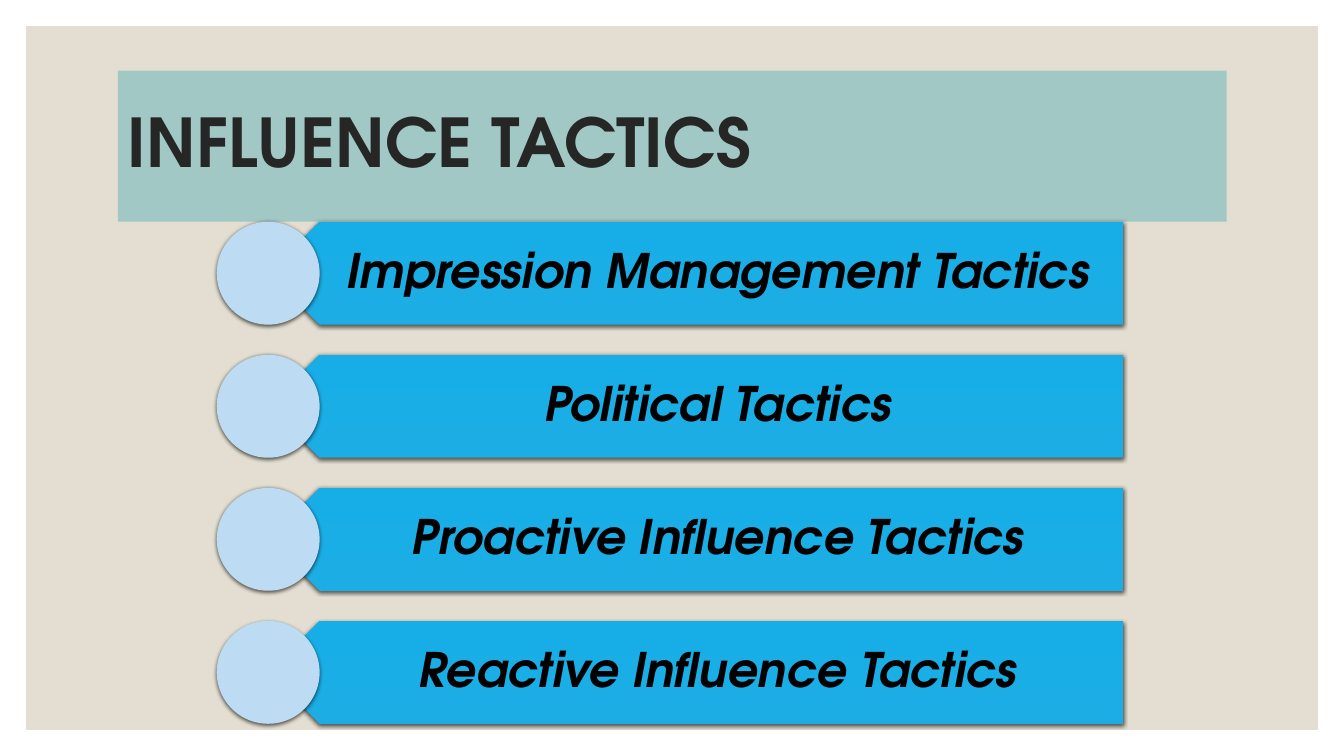
from dataclasses import dataclass

from lxml.etree import SubElement
from pptx import Presentation
from pptx.dml.color import RGBColor
from pptx.enum.shapes import MSO_SHAPE
from pptx.enum.text import MSO_ANCHOR, MSO_AUTO_SIZE, PP_ALIGN
from pptx.oxml.ns import qn
from pptx.util import Pt


@dataclass(frozen=True)
class Theme:
    font: str = "TeX Gyre Adventor"
    panel: str = "E3DED1"
    title_band: str = "A1C8C5"
    title_text: str = "262626"
    arrow_top: str = "1CADE4"
    arrow_bottom: str = "17AEE7"
    circle: str = "BDDBF2"
    tactic_text: str = "000000"
    shadow: str = "000000"
    title_size: float = 48
    tactic_size: float = 34


@dataclass(frozen=True)
class Box:
    left: float
    top: float
    width: float
    height: float

    def lengths(self):
        return Pt(self.left), Pt(self.top), Pt(self.width), Pt(self.height)


THEME = Theme()
SLIDE_WIDTH, SLIDE_HEIGHT = 960, 540
PANEL_MARGIN = 18.7
TITLE_BOX = Box(84.2, 50.4, 792, 108)
LIST_BOX = Box(154.8, 158.4, 647.4, 358.6)
ROW_HEIGHT = 73.5
TACTICS = (
    "Impression Management Tactics",
    "Political Tactics",
    "Proactive Influence Tactics",
    "Reactive Influence Tactics",
)


def color(value):
    return RGBColor.from_string(value)


def write_text(shape, text, size, text_color, align=PP_ALIGN.LEFT, italic=False,
               insets=(7.2, 3.6, 7.2, 3.6)):
    frame = shape.text_frame
    frame.word_wrap = True
    frame.auto_size = MSO_AUTO_SIZE.NONE
    frame.vertical_anchor = MSO_ANCHOR.MIDDLE
    frame.margin_left, frame.margin_top, frame.margin_right, frame.margin_bottom = map(Pt, insets)
    paragraph = frame.paragraphs[0]
    paragraph.alignment = align
    paragraph.line_spacing = 0.9
    run = paragraph.add_run()
    run.text = text
    run.font.name = THEME.font
    run.font.size = Pt(size)
    run.font.bold = True
    run.font.italic = italic
    run.font.color.rgb = color(text_color)


def add_plain_shape(shapes, preset, box):
    shape = shapes.add_shape(preset, *box.lengths())
    shape.shadow.inherit = False
    shape.line.fill.background()
    return shape


def fill_solid(shape, fill_color):
    shape.fill.solid()
    shape.fill.fore_color.rgb = color(fill_color)


def fill_gradient(shape, top_color, bottom_color):
    shape.fill.gradient()
    shape.fill.gradient_angle = 270
    for stop, stop_color in zip(shape.fill.gradient_stops, (top_color, bottom_color)):
        stop.color.rgb = color(stop_color)


def add_drop_shadow(shape):
    effects = shape._element.spPr.find(qn("a:effectLst"))
    shadow = SubElement(effects, qn("a:outerShdw"), blurRad=str(Pt(3)), dist=str(Pt(1)),
                        dir="5400000", rotWithShape="0")
    shade = SubElement(shadow, qn("a:srgbClr"), val=THEME.shadow)
    SubElement(shade, qn("a:alpha"), val="63000")


def place_title(slide, box, text):
    title = slide.shapes.title
    title.left, title.top, title.width, title.height = box.lengths()
    fill_solid(title, THEME.title_band)
    write_text(title, text, THEME.title_size, THEME.title_text)


def add_panel(slide, box):
    panel = add_plain_shape(slide.shapes, MSO_SHAPE.RECTANGLE, box)
    fill_solid(panel, THEME.panel)
    slide.shapes.title._element.addprevious(panel._element)


def add_tactic(shapes, box, text):
    radius = box.height / 2
    arrow_box = Box(box.left + radius, box.top, box.width - radius, box.height)
    arrow = add_plain_shape(shapes, MSO_SHAPE.PENTAGON, arrow_box)
    arrow.rotation = 180
    fill_gradient(arrow, THEME.arrow_top, THEME.arrow_bottom)
    add_drop_shadow(arrow)

    text_left = box.left + radius * 1.5
    text_box = Box(text_left, box.top, box.left + box.width - text_left, box.height)
    label = shapes.add_textbox(*text_box.lengths())
    write_text(label, text, THEME.tactic_size, THEME.tactic_text, align=PP_ALIGN.CENTER,
               italic=True, insets=(32.4, 10.1, 18.7, 10.1))

    circle = add_plain_shape(shapes, MSO_SHAPE.OVAL,
                             Box(box.left, box.top, box.height, box.height))
    fill_solid(circle, THEME.circle)
    add_drop_shadow(circle)


def add_tactic_list(slide, box, tactics):
    group = slide.shapes.add_group_shape()
    pitch = (box.height - ROW_HEIGHT) / (len(tactics) - 1)
    for index, tactic in enumerate(tactics):
        row = Box(box.left, box.top + index * pitch, box.width, ROW_HEIGHT)
        add_tactic(group.shapes, row, tactic)


def main():
    presentation = Presentation()
    presentation.slide_width = Pt(SLIDE_WIDTH)
    presentation.slide_height = Pt(SLIDE_HEIGHT)
    slide = presentation.slides.add_slide(presentation.slide_layouts.get_by_name("Title Only"))
    add_panel(slide, Box(PANEL_MARGIN, PANEL_MARGIN, SLIDE_WIDTH - 2 * PANEL_MARGIN,
                         SLIDE_HEIGHT - 2 * PANEL_MARGIN))
    place_title(slide, TITLE_BOX, "INFLUENCE TACTICS")
    add_tactic_list(slide, LIST_BOX, TACTICS)
    presentation.save("out.pptx")


if __name__ == "__main__":
    main()
